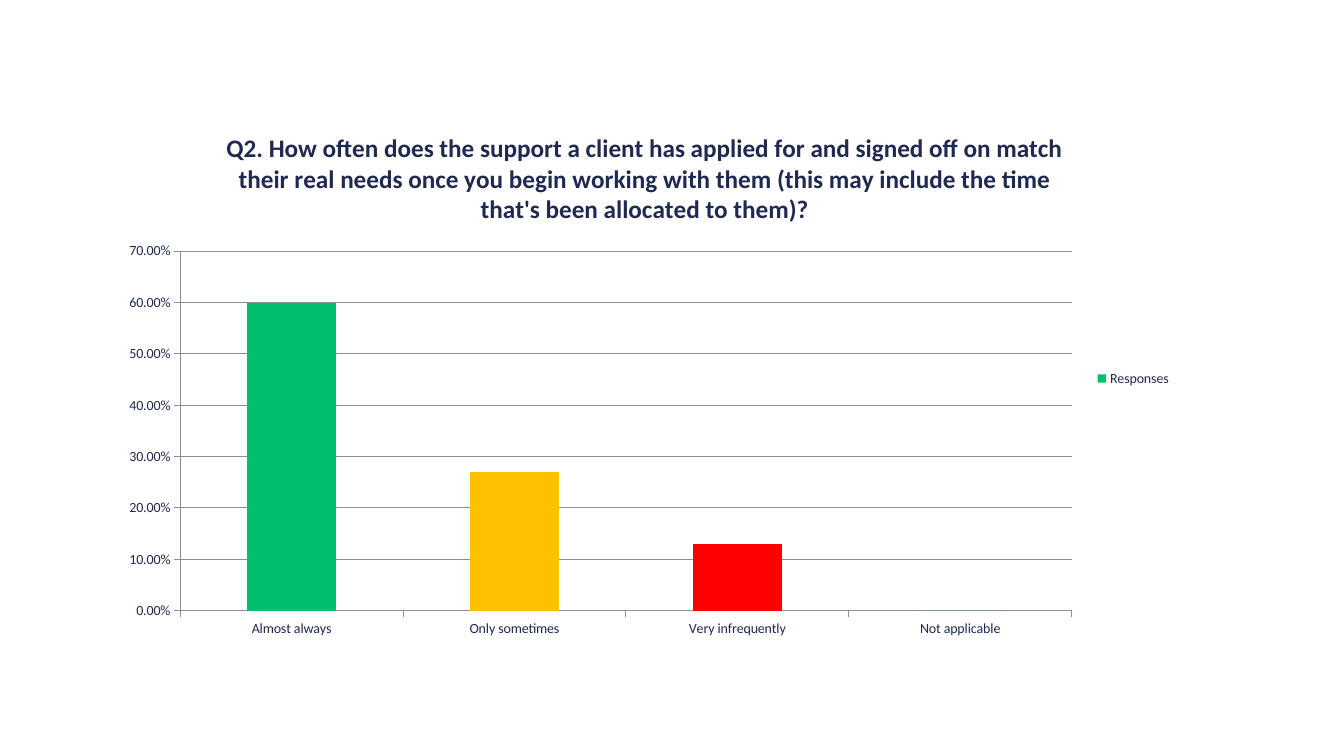
"""Build a slide with a column chart of how often support matches client needs."""
from dataclasses import dataclass
from typing import Any

import pptx
import pptx.chart.data
import pptx.dml.color
import pptx.enum.chart
import pptx.util

COLORS = {
    "text": "202950",
    "axis": "8A8CA0",
    "green": "00BF6F",
    "amber": "FFC000",
    "red": "FF0000",
}
TITLE = (
    "Q2. How often does the support a client has applied for and signed off on "
    "match their real needs once you begin working with them (this may include "
    "the time that's been allocated to them)?"
)


@dataclass(frozen=True)
class Answer:
    label: str
    share: float
    color: str


ANSWERS = [
    Answer("Almost always", 0.6, "green"),
    Answer("Only sometimes", 0.27, "amber"),
    Answer("Very infrequently", 0.13, "red"),
    Answer("Not applicable", 0, "green"),
]


def rgb(name: str) -> pptx.dml.color.RGBColor:
    return pptx.dml.color.RGBColor.from_string(COLORS[name])


def apply_format(target: Any, values: dict[str, Any]) -> None:
    for name, value in values.items():
        setattr(target, name, value)


def style_font(font: Any, size: float, bold: bool) -> None:
    apply_format(font, {"name": "Calibri", "size": pptx.util.Pt(size), "bold": bold})
    font.color.rgb = rgb("text")


def style_line(line: Any) -> None:
    line.color.rgb = rgb("axis")
    line.width = pptx.util.Pt(0.75)


def fill_solid(fill: Any, color: str) -> None:
    fill.solid()
    fill.fore_color.rgb = rgb(color)


def add_answer_chart(slide: Any) -> None:
    chart_data = pptx.chart.data.CategoryChartData(number_format="0.00%")
    chart_data.categories = [answer.label for answer in ANSWERS]
    chart_data.add_series("Responses", [answer.share for answer in ANSWERS])
    position = [pptx.util.Inches(length) for length in (1.07, 1.09, 10.65, 5.33)]
    chart = slide.shapes.add_chart(
        pptx.enum.chart.XL_CHART_TYPE.COLUMN_CLUSTERED, *position, chart_data
    ).chart
    style_font(chart.font, 10, False)

    chart.has_title = True
    title_frame = chart.chart_title.text_frame
    title_frame.text = TITLE
    style_font(title_frame.paragraphs[0].runs[0].font, 18, True)
    chart.chart_title.include_in_layout = False

    chart.has_legend = True
    apply_format(chart.legend, {
        "position": pptx.enum.chart.XL_LEGEND_POSITION.RIGHT,
        "include_in_layout": False,
    })

    for axis in (chart.category_axis, chart.value_axis):
        axis.major_tick_mark = pptx.enum.chart.XL_TICK_MARK.OUTSIDE
        style_line(axis.format.line)
    apply_format(chart.value_axis, {
        "minimum_scale": 0,
        "maximum_scale": 0.7,
        "major_unit": 0.1,
        "has_major_gridlines": True,
    })
    apply_format(chart.value_axis.tick_labels, {
        "number_format": "0.00%",
        "number_format_is_linked": False,
    })
    style_line(chart.value_axis.major_gridlines.format.line)

    plot = chart.plots[0]
    apply_format(plot, {"gap_width": 150, "vary_by_categories": False})
    series = plot.series[0]
    fill_solid(series.format.fill, "green")
    for index, answer in enumerate(ANSWERS):
        if answer.color != "green":
            fill_solid(series.points[index].format.fill, answer.color)


def main() -> None:
    presentation = pptx.Presentation()
    apply_format(presentation, {
        "slide_width": pptx.util.Inches(13.33),
        "slide_height": pptx.util.Inches(7.5),
    })
    slide = presentation.slides.add_slide(presentation.slide_layouts[6])
    add_answer_chart(slide)
    presentation.save("out.pptx")


if __name__ == "__main__":
    main()
